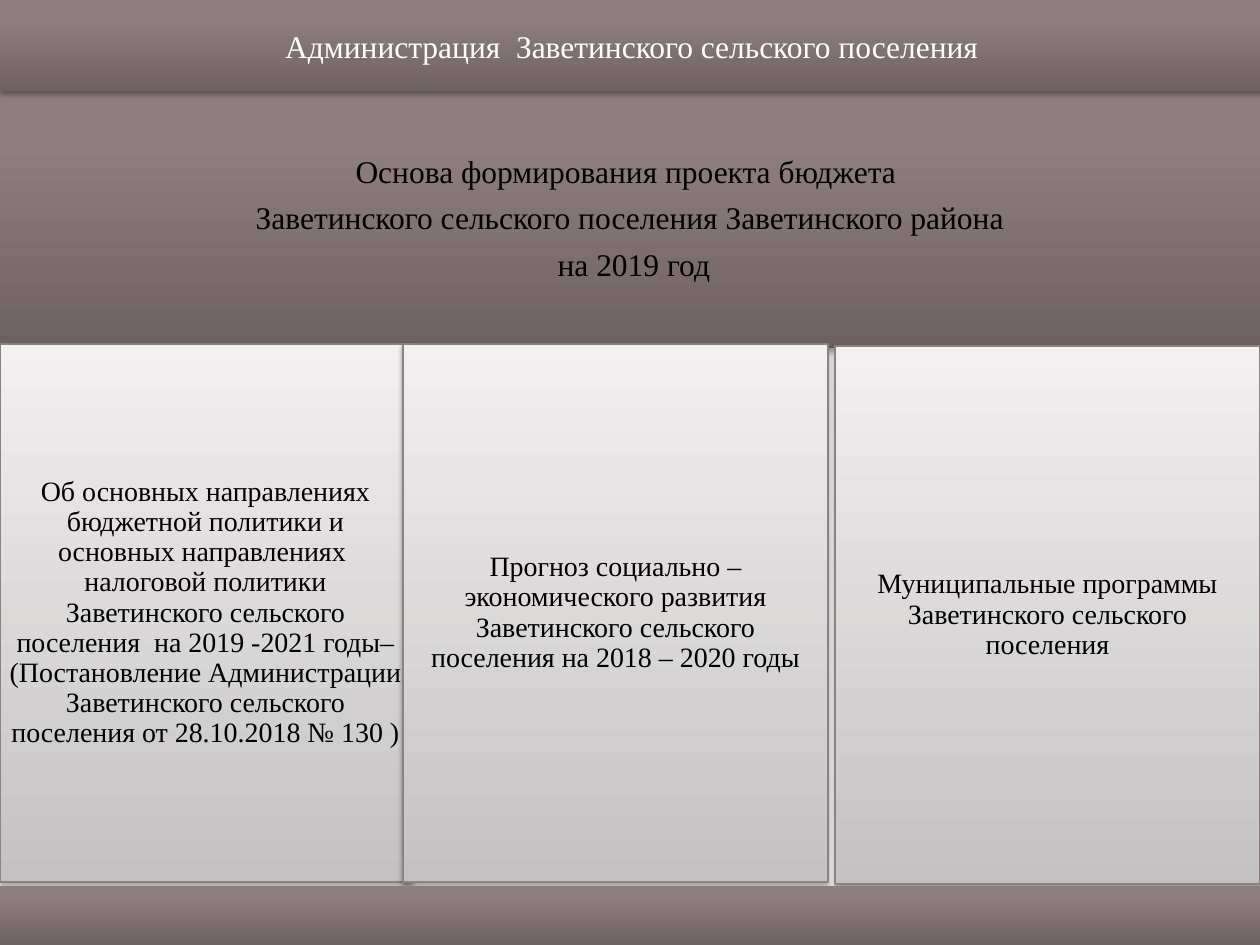
from dataclasses import dataclass

from pptx import Presentation
from pptx import util as u
from pptx.dml import color
from pptx.enum import shapes, text
from pptx.oxml import ns, xmlchemy

PX = u.Inches(1) / 126


@dataclass(frozen=True)
class Theme:
    font: str = "Times New Roman"
    heading_size: int = 18
    card_size: int = 16
    dark: str = "000000"
    light: str = "FFFFFF"
    border: str = "8E8182"
    band_stops: tuple = ((0, "6E6162"), (80, "8E7E7F"), (100, "8F7E80"))
    card_stops: tuple = ((0, "C3C1C1"), (100, "F4F0F1"))


THEME = Theme()


def px(value):
    return u.Emu(round(value * PX))


def rgb(value):
    return color.RGBColor.from_string(value)


def add_child(parent, tag, **attributes):
    child = xmlchemy.OxmlElement(tag)
    for name, value in attributes.items():
        child.set(name, str(value))
    parent.append(child)
    return child


def set_gradient(shape, stops):
    shape.fill.gradient()
    shape.fill.gradient_angle = 90
    stop_list = shape._element.spPr.find(".//" + ns.qn("a:gsLst"))
    for stop in list(stop_list):
        stop_list.remove(stop)
    for position, value in stops:
        stop = add_child(stop_list, "a:gs", pos=position * 1000)
        add_child(stop, "a:srgbClr", val=value)


def set_shadow(shape, distance, opacity):
    shape.shadow.inherit = False
    effects = shape._element.spPr.find(ns.qn("a:effectLst"))
    shadow = add_child(effects, "a:outerShdw", blurRad=u.Pt(3.1), dist=u.Pt(distance),
                       dir=5400000, rotWithShape=0)
    shade = add_child(shadow, "a:srgbClr", val=THEME.dark)
    add_child(shade, "a:alpha", val=opacity * 1000)


def style_band(shape):
    set_gradient(shape, THEME.band_stops)
    shape.line.fill.background()
    set_shadow(shape, 1.8, 35)


def style_card(shape):
    set_gradient(shape, THEME.card_stops)
    shape.line.color.rgb = rgb(THEME.border)
    shape.line.width = u.Pt(0.75)
    set_shadow(shape, 1.6, 38)


def write_text(shape, *lines, size, ink=THEME.dark, inset=9, spacing=0.9, after=0):
    frame = shape.text_frame
    frame.word_wrap = True
    frame.auto_size = text.MSO_AUTO_SIZE.NONE
    frame.vertical_anchor = text.MSO_ANCHOR.MIDDLE
    frame.margin_left = frame.margin_right = px(inset)
    frame.margin_top = frame.margin_bottom = px(inset)
    for index, line in enumerate(lines):
        paragraph = frame.add_paragraph() if index else frame.paragraphs[0]
        paragraph.alignment = text.PP_ALIGN.CENTER
        paragraph.line_spacing = spacing
        paragraph.space_after = u.Pt(after)
        run = paragraph.add_run()
        run.text = line
        run.font.name = THEME.font
        run.font.size = u.Pt(size)
        run.font.color.rgb = rgb(ink)


def add_rectangle(slide, left, top, width, height):
    return slide.shapes.add_shape(shapes.MSO_SHAPE.RECTANGLE,
                                  px(left), px(top), px(width), px(height))


def add_heading(slide):
    band = add_rectangle(slide, 0, 91, 1260, 257)
    style_band(band)
    write_text(band, "Основа формирования проекта бюджета ",
               "Заветинского сельского поселения Заветинского района",
               " на 2019 год", size=THEME.heading_size, after=7)


def add_card(slide, left, top, width, content):
    card = add_rectangle(slide, left, top, width, 538)
    style_card(card)
    write_text(card, content, size=THEME.card_size)


def place_title(slide, content):
    title = slide.shapes.title
    title.left, title.top, title.width, title.height = px(0), px(0), px(1264), px(91)
    style_band(title)
    write_text(title, content, size=THEME.heading_size, ink=THEME.light,
               inset=6, spacing=1.0)
    slide.shapes._spTree.append(title._element)


def main():
    presentation = Presentation()
    presentation.slide_width, presentation.slide_height = px(1260), px(945)
    slide = presentation.slides.add_slide(presentation.slide_layouts[5])

    add_heading(slide)
    cards = [
        (0, 344, 411, "Об основных направлениях бюджетной политики и основных "
                      "направлениях  налоговой политики Заветинского сельского "
                      "поселения  на 2019 -2021 годы– (Постановление Администрации "
                      "Заветинского сельского поселения от 28.10.2018 № 130 )"),
        (403, 344, 425, "Прогноз социально – экономического развития "
                        "Заветинского сельского поселения на 2018 – 2020 годы"),
        (835, 346, 425, "Муниципальные программы Заветинского сельского поселения"),
    ]
    for card in cards:
        add_card(slide, *card)
    style_band(add_rectangle(slide, 0, 886, 1260, 59))
    place_title(slide, "Администрация  Заветинского сельского поселения")

    presentation.save("out.pptx")


if __name__ == "__main__":
    main()
